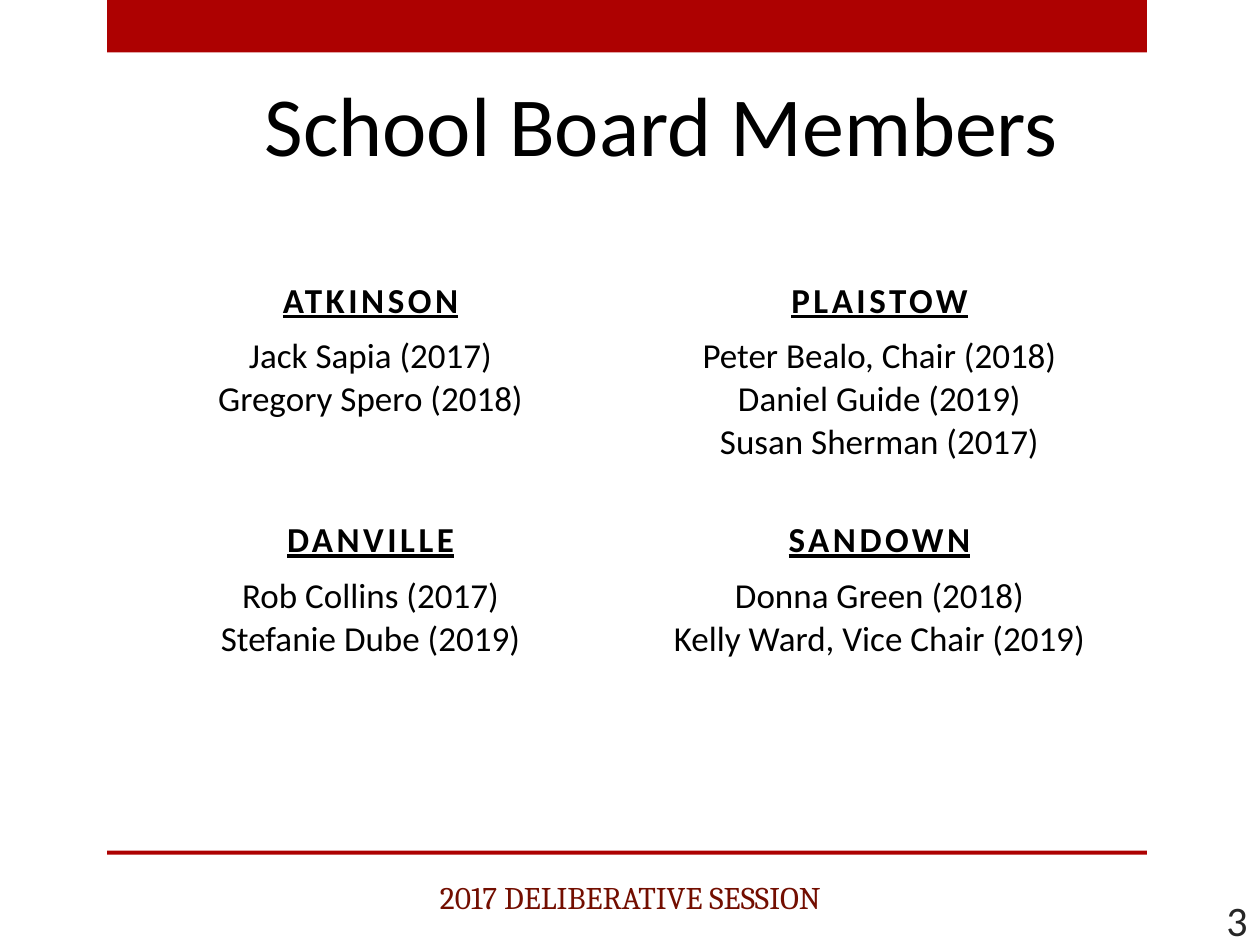
from dataclasses import dataclass

from pptx import Presentation
from pptx.dml.color import RGBColor
from pptx.enum import shapes, text
from pptx.util import Cm, Pt


@dataclass(frozen=True)
class Theme:
    red: str = "AD0101"
    ink: str = "000000"
    footer: str = "730E00"
    number: str = "262626"
    body_font: str = "Calibri"
    footer_font: str = "Cambria"
    title_size: int = 48
    number_size: int = 24
    body_size: int = 20
    footer_size: int = 18


THEME = Theme()

# Each pair of towns shares a heading row and a member row.
BOARD = [
    [("ATKINSON", ["Jack Sapia (2017)", "Gregory Spero (2018)"]),
     ("PLAISTOW", ["Peter Bealo, Chair (2018)", "Daniel Guide (2019)",
                   "Susan Sherman (2017)"])],
    [("DANVILLE", ["Rob Collins (2017)", "Stefanie Dube (2019)"]),
     ("SANDOWN", ["Donna Green (2018)", "Kelly Ward, Vice Chair (2019)"])],
]
HEADING_HEIGHT = 1.12
MEMBER_HEIGHTS = [3.71, 2.21]
EMPTY_HEIGHTS = [1.04] * 3


def write(frame, lines, size=THEME.body_size, color=THEME.ink,
          font=THEME.body_font, align=text.PP_ALIGN.CENTER,
          heading=False, indent=0):
    """Write one paragraph per line; a heading is bold, underlined and spaced."""
    for index, line in enumerate(lines):
        para = frame.add_paragraph() if index else frame.paragraphs[0]
        para.alignment = align
        if indent:
            properties = para._p.get_or_add_pPr()
            properties.set("marL", str(Cm(indent)))
            properties.set("indent", "0")
        span = para.add_run()
        span.text = line
        span.font.name = font
        span.font.size = Pt(size)
        span.font.color.rgb = RGBColor.from_string(color)
        span.font.bold = span.font.underline = heading
        if heading:
            span.font._element.set("spc", "200")


def add_bar(page, top, height):
    bar = page.shapes.add_shape(shapes.MSO_SHAPE.RECTANGLE,
                                Cm(2.16), Cm(top), Cm(20.96), Cm(height))
    bar.shadow.inherit = False
    bar.fill.solid()
    bar.fill.fore_color.rgb = RGBColor.from_string(THEME.red)
    bar.line.fill.background()


def add_text(page, line, left, top, width, height,
             anchor=text.MSO_ANCHOR.TOP, **style):
    box = page.shapes.add_textbox(Cm(left), Cm(top), Cm(width), Cm(height))
    box.text_frame.word_wrap = True
    box.text_frame.vertical_anchor = anchor
    write(box.text_frame, [line], **style)


def add_board_table(page):
    heights = [height for members in MEMBER_HEIGHTS
               for height in (HEADING_HEIGHT, members)] + EMPTY_HEIGHTS
    table = page.shapes.add_table(len(heights), 2, Cm(2.34), Cm(5.51),
                                  Cm(20.52), Cm(sum(heights))).table
    table.first_row = table.horz_banding = False
    for row, height in zip(table.rows, heights):
        row.height = Cm(height)
    for cell in table.iter_cells():
        cell.fill.background()
    for pair, towns in enumerate(BOARD):
        for column, (town, members) in enumerate(towns):
            write(table.cell(2 * pair, column).text_frame, [town], heading=True)
            write(table.cell(2 * pair + 1, column).text_frame, members)
    for row in (5, 6):
        table.cell(row, 0).merge(table.cell(row, 1))


def main():
    deck = Presentation()
    deck.slide_width, deck.slide_height = Cm(25.4), Cm(19.05)
    page = deck.slides.add_slide(deck.slide_layouts[6])
    add_bar(page, top=0, height=1.06)
    add_bar(page, top=17.15, height=0.08)
    add_text(page, "School Board Members", 0, 1.27, 25.4, 2.34,
             anchor=text.MSO_ANCHOR.BOTTOM, size=THEME.title_size, indent=1.27)
    add_board_table(page)
    add_text(page, "3", 23.29, 18.03, 2.11, 1.02,
             anchor=text.MSO_ANCHOR.MIDDLE, size=THEME.number_size,
             color=THEME.number, align=text.PP_ALIGN.RIGHT)
    add_text(page, "2017 DELIBERATIVE SESSION", 0.43, 17.58, 24.56, 1.02,
             size=THEME.footer_size, color=THEME.footer, font=THEME.footer_font)
    deck.save("out.pptx")


if __name__ == "__main__":
    main()
